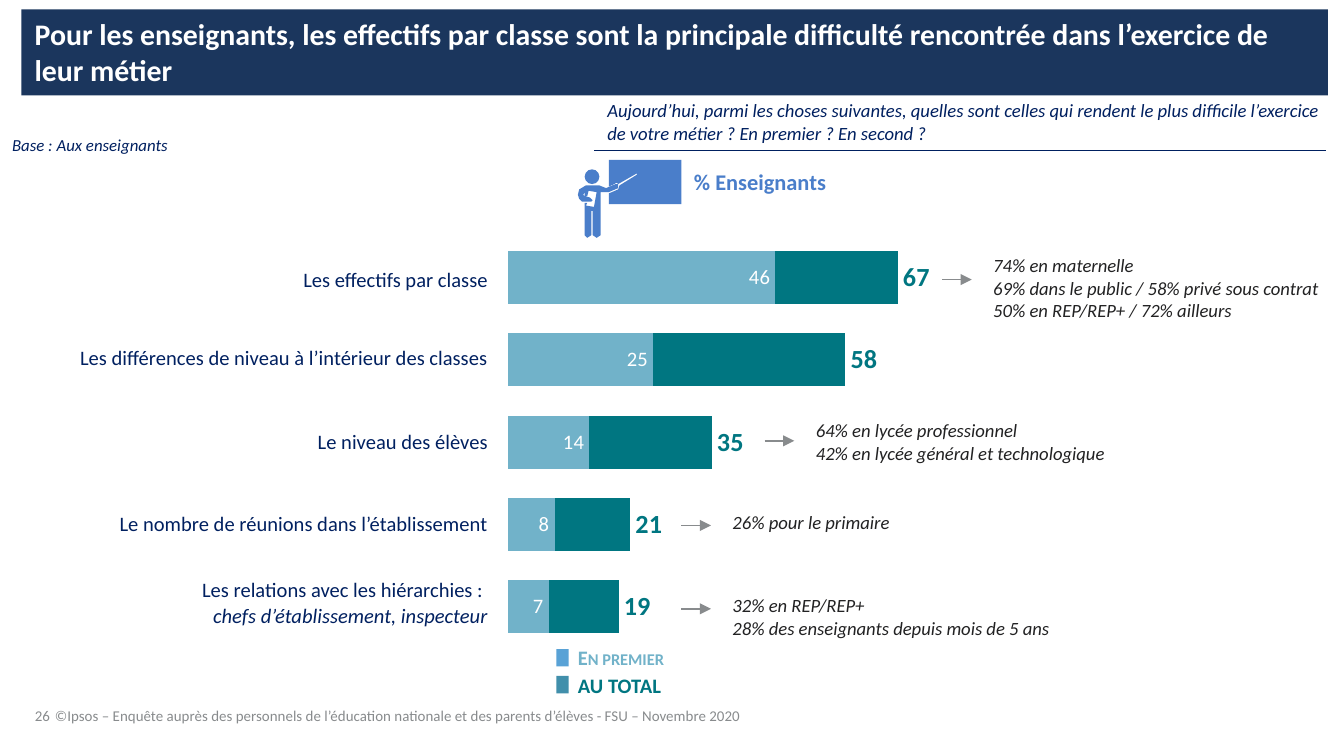
import pptx
import pptx.chart.data
import pptx.dml.color
import pptx.enum.chart
import pptx.enum.shapes
import pptx.enum.text
import pptx.oxml
import pptx.oxml.ns
import pptx.util
from dataclasses import dataclass

Inches = pptx.util.Inches
Pt = pptx.util.Pt
Align = pptx.enum.text.PP_ALIGN
Anchor = pptx.enum.text.MSO_ANCHOR
Shape = pptx.enum.shapes.MSO_SHAPE
Place = pptx.enum.chart.XL_LABEL_POSITION


@dataclass(frozen=True)
class Theme:
    font: str = "Calibri"
    navy: str = "002060"
    band: str = "1B365D"
    white: str = "FFFFFF"
    dark: str = "222223"
    gray: str = "888B8D"
    light: str = "71B2C9"
    teal: str = "007681"
    blue: str = "4A7ECA"
    key_one: str = "59A2D6"
    key_two: str = "418FAB"
    head: int = 16
    total: int = 14
    group: int = 12
    label: int = 11
    note: int = 10
    base: int = 9
    foot: int = 8


T = Theme()
ROWS = [
    (0.39, ["Les effectifs par classe"]),
    (0.77, ["Les différences de niveau à l’intérieur des classes"]),
    (0.47, ["Le niveau des élèves"]),
    (0.75, ["Le nombre de réunions dans l’établissement"]),
    (0.43, ["Les relations avec les hiérarchies : ", "chefs d’établissement, inspecteur"]),
]
FIRST = [46, 25, 14, 8, 7]
TOTAL = [67, 58, 35, 21, 19]
# arrow left, arrow height, text top, lines
NOTES = [
    (7.01, 2.08, 1.89, ["74% en maternelle", "69% dans le public / 58% privé sous contrat",
                        "50% en REP/REP+ / 72% ailleurs"]),
    (5.69, 3.28, 3.12, ["64% en lycée professionnel", "42% en lycée général et technologique"]),
    (5.07, 3.91, 3.80, ["26% pour le primaire"]),
    (5.07, 4.53, 4.42, ["32% en REP/REP+", "28% des enseignants depuis mois de 5 ans"]),
]
# icon outlines, in hundredths of an inch
BOARD = [(459, 136), (460, 137), (474, 129), (474, 130), (461, 138), (460, 141), (453, 144),
         (453, 152), (507, 152), (507, 119), (453, 119), (453, 139), (457, 137)]
BODY = [(433, 150), (440, 150), (441, 149), (439, 147), (435, 146), (434, 145), (435, 143),
        (435, 146), (437, 146), (438, 142), (444, 143), (442, 154), (436, 153), (437, 151),
        (435, 151), (435, 175), (437, 177), (440, 175), (440, 157), (441, 157), (441, 175),
        (444, 177), (447, 175), (447, 143), (453, 143), (460, 140), (460, 137), (458, 137),
        (451, 140), (446, 138), (436, 138), (431, 141), (430, 145), (431, 148)]


def put(item, **values):
    for name, value in values.items():
        setattr(item, name, value)


def style(font, size, color, **more):
    put(font, name=T.font, size=Pt(size), **more)
    font.color.rgb = pptx.dml.color.RGBColor.from_string(color)


def paint(shape, color):
    shape.fill.solid()
    shape.fill.fore_color.rgb = pptx.dml.color.RGBColor.from_string(color)


def element(tag, inner="", **values):
    """Make a namespaced XML element such as a:ln or c:layout."""
    attrs = " ".join(f'{key}="{value}"' for key, value in values.items())
    return pptx.oxml.parse_xml(f'<{tag} {pptx.oxml.ns.nsdecls("a", "c")} {attrs}>{inner}</{tag}>')


def write(frame, lines, size, color, align=Align.LEFT, **more):
    frame.word_wrap = True
    for num, line in enumerate(lines):
        para = frame.paragraphs[0] if num == 0 else frame.add_paragraph()
        para.alignment = align
        run = para.add_run()
        run.text = line
        style(run.font, size, color, **more)


def text(shapes, box, lines, size, color, inset=True, anchor=Anchor.TOP, **more):
    frame = shapes.add_textbox(*map(Inches, box)).text_frame
    if not inset:
        put(frame, margin_left=0, margin_right=0, margin_top=0, margin_bottom=0)
    frame.vertical_anchor = anchor
    write(frame, lines, size, color, **more)
    return frame


def block(shapes, box, color, kind=Shape.RECTANGLE):
    shape = shapes.add_shape(kind, *map(Inches, box))
    finish(shape, color)
    return shape


def finish(shape, color):
    paint(shape, color)
    shape.line.fill.background()
    shape.shadow.inherit = False


def line(shapes, left, right, top, color, width, arrow=False):
    link = shapes.add_connector(pptx.enum.shapes.MSO_CONNECTOR.STRAIGHT,
                                Inches(left), Inches(top), Inches(right), Inches(top))
    link.line.color.rgb = pptx.dml.color.RGBColor.from_string(color)
    link.line.width = Pt(width)
    if arrow:
        link.line._get_or_add_ln().append(element("a:tailEnd", type="triangle"))
    link._element.spPr.append(element("a:effectLst"))


def labels(shapes):
    """Add the row names as a one-column table."""
    height = sum(row[0] for row in ROWS)
    table = shapes.add_table(len(ROWS), 1, Inches(-0.29), Inches(1.89),
                             Inches(3.93), Inches(height)).table
    put(table, first_row=False, horz_banding=False)
    edge = f'<a:solidFill><a:srgbClr val="{T.white}"/></a:solidFill>'
    for num, (height, lines) in enumerate(ROWS):
        table.rows[num].height = Inches(height)
        cell = table.cell(num, 0)
        put(cell, vertical_anchor=Anchor.MIDDLE, margin_left=Inches(0.01),
            margin_right=Inches(0.01), margin_top=Inches(0.01), margin_bottom=0)
        write(cell.text_frame, lines, T.label, T.navy, Align.RIGHT)
        for para in cell.text_frame.paragraphs[1:]:
            para.runs[0].font.italic = True
        cell.fill.background()
        for spot, side in enumerate("LRTB"):
            cell._tc.tcPr.insert(spot, element(f"a:ln{side}", edge, w=Pt(1)))


def bars(shapes):
    wide, high = 3.3, 3.39
    data = pptx.chart.data.CategoryChartData()
    data.categories = [str(num + 1) for num in range(len(ROWS))]
    data.add_series("Series 1", FIRST)
    data.add_series("Series 2", [total - first for first, total in zip(FIRST, TOTAL)])
    data.add_series("Series 3", TOTAL)
    chart = shapes.add_chart(pptx.enum.chart.XL_CHART_TYPE.BAR_STACKED, Inches(3.7),
                             Inches(1.72), Inches(wide), Inches(high), data).chart
    put(chart, has_legend=False, has_title=False)
    style(chart.font, 18, T.dark)
    put(chart.category_axis, visible=False, reverse_order=True)
    put(chart.value_axis, visible=False, minimum_scale=0, maximum_scale=70,
        major_unit=5, has_major_gridlines=False)
    plot = chart.plots[0]
    put(plot, gap_width=55, overlap=100, vary_by_categories=False)
    first, rest, total = plot.series
    paint(first.format, T.light)
    paint(rest.format, T.teal)
    total.format.fill.background()
    total.format.line.fill.background()
    for series, place, size, color, bold in (
            (first, Place.INSIDE_END, T.label, T.white, False),
            (total, Place.INSIDE_BASE, T.total, T.teal, True)):
        put(series.data_labels, show_value=True, position=place)
        style(series.data_labels.font, size, color, bold=bold)
    area = chart._chartSpace.chart.plotArea
    for old in area.findall(pptx.oxml.ns.qn("c:layout")):
        area.remove(old)
    spots = dict(layoutTarget="inner", xMode="edge", yMode="edge",
                 x=0.08 / wide, y=0.04 / high, w=3.03 / wide, h=3.06 / high)
    inner = "".join(f'<c:{key} val="{value}"/>' for key, value in spots.items())
    area.insert(0, element("c:layout", f"<c:manualLayout>{inner}</c:manualLayout>"))


def legend(shapes):
    group = shapes.add_group_shape().shapes
    block(group, (4.14, 4.83, 0.09, 0.13), T.key_one)
    block(group, (4.14, 5.03, 0.09, 0.13), T.key_two)
    frame = text(group, (4.3, 4.8, 0.94, 0.19), ["En premier"], T.label, T.light, False, bold=True)
    frame.paragraphs[0].runs[0].font._element.set("cap", "small")
    text(group, (4.3, 5.01, 0.94, 0.19), ["AU TOTAL"], T.label, T.teal, False, bold=True)


def teacher(shapes):
    group = shapes.add_group_shape().shapes
    for points in (BOARD, BODY):
        path = group.build_freeform(*points[0], scale=Inches(0.01))
        path.add_line_segments(points[1:], close=True)
        finish(path.convert_to_shape(), T.blue)
    block(group, (4.35, 1.26, 0.11, 0.11), T.blue, Shape.OVAL)


def main():
    deck = pptx.Presentation()
    put(deck, slide_width=Inches(10), slide_height=Inches(10) * 9 // 16)
    shapes = deck.slides.add_slide(deck.slide_layouts[6]).shapes
    text(shapes, (0.26, 5.13, 0.34, 0.26), ["26"], T.foot, T.gray, False, Anchor.BOTTOM)
    text(shapes, (4.42, 0.66, 5.52, 0.49),
         ["Aujourd’hui, parmi les choses suivantes, quelles sont celles qui rendent le plus "
          "difficile l’exercice de votre métier ? En premier ? En second ?"],
         T.note, T.navy, anchor=Anchor.MIDDLE, italic=True)
    line(shapes, 4.42, 9.87, 1.12, T.navy, 0.5)
    title = block(shapes, (0.16, 0.07, 9.72, 0.64), T.band).text_frame
    title.vertical_anchor = Anchor.TOP
    write(title, ["Pour les enseignants, les effectifs par classe sont la principale difficulté "
                  "rencontrée dans l’exercice de leur métier"], T.head, T.white, bold=True)
    text(shapes, (0.31, 5.21, 7.39, 0.2),
         ["©Ipsos – Enquête auprès des personnels de l’éducation nationale et des parents "
          "d’élèves - FSU – Novembre 2020"], T.foot, T.gray)
    labels(shapes)
    text(shapes, (0.09, 1, 2.39, 0.15), ["Base : Aux enseignants"], T.base, T.navy, False,
         italic=True)
    bars(shapes)
    legend(shapes)
    text(shapes, (4.9, 1.2, 1.51, 0.3), ["% Enseignants"], T.group, T.blue,
         align=Align.CENTER, bold=True)
    teacher(shapes)
    for left, mid, top, lines in NOTES:
        text(shapes, (left + 0.38, top, 2.79, 0.17 * len(lines)), lines, T.note, T.dark, False,
             italic=True)
        line(shapes, left, left + 0.22, mid, T.gray, 1, arrow=True)
    deck.save("out.pptx")


if __name__ == "__main__":
    main()
